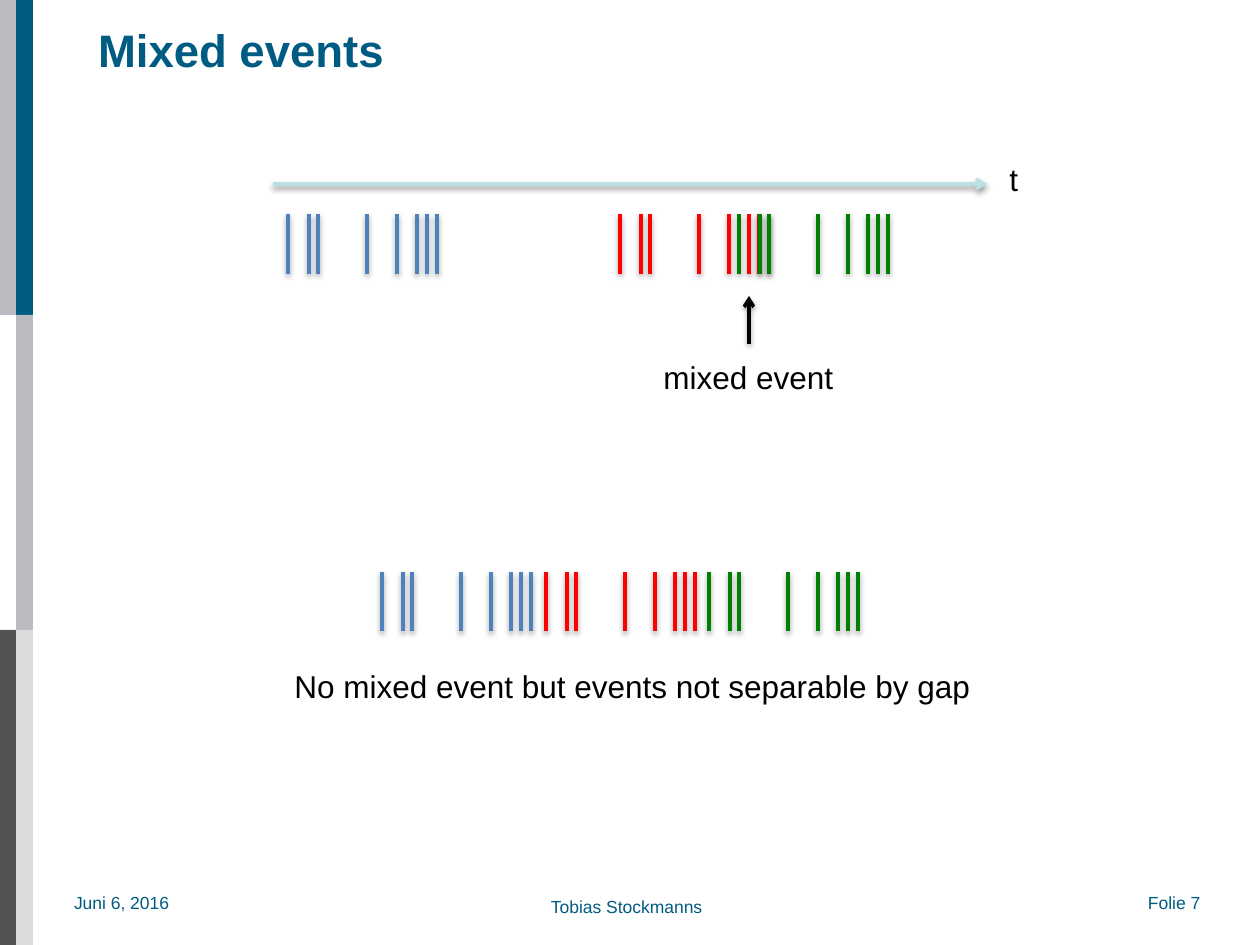
from lxml import etree
from pptx import Presentation
from pptx.dml.color import RGBColor
from pptx.enum.shapes import MSO_CONNECTOR, MSO_SHAPE
from pptx.enum.text import MSO_ANCHOR, MSO_AUTO_SIZE
from pptx.oxml import parse_xml
from pptx.oxml.ns import nsdecls, qn
from pptx.util import Emu, Pt

STRAIGHT = MSO_CONNECTOR.STRAIGHT
RECTANGLE = MSO_SHAPE.RECTANGLE
MIDDLE, TOP = MSO_ANCHOR.MIDDLE, MSO_ANCHOR.TOP
FIT_SHAPE, NO_FIT = MSO_AUTO_SIZE.SHAPE_TO_FIT_TEXT, MSO_AUTO_SIZE.NONE

PETROL = RGBColor(0x00, 0x5B, 0x82)
SILVER = RGBColor(0xB9, 0xBB, 0xC0)
SLATE = RGBColor(0x51, 0x53, 0x55)
PALE = RGBColor(0xDC, 0xDC, 0xDC)
BLUE = RGBColor(0x4F, 0x81, 0xBD)
RED = RGBColor(0xFF, 0x00, 0x00)
GREEN = RGBColor(0x00, 0x80, 0x00)
AQUA = RGBColor(0xBB, 0xE0, 0xE3)
BLACK = RGBColor(0x00, 0x00, 0x00)

FONT = "Arial"
EMU_PER_PX = 914400 / 126
BAND_HEIGHT = 315

BANDS = [(0, 0, 18, SILVER), (0, 2, 18, SLATE),
         (16, 0, 17, PETROL), (16, 1, 17, SILVER), (16, 2, 17, PALE)]

TITLE = ("Mixed events", 98, 10, 916, 78)
FOOTERS = [("Juni 6, 2016", 74, 892, 107, 21),
           ("Folie 7", 1148, 892, 78, 21),
           ("Tobias Stockmanns", 551, 896, 159, 21)]
LABELS = [("t", 997, 154, 34, 50),
          ("mixed event", 651, 352, 197, 50),
          ("No mixed event but events not separable by gap", 282, 661, 708, 50)]

HIT_OFFSETS = [0, 21, 30, 79, 109, 129, 139, 149]
EVENT_ROWS = [
    (572, 59, [(382, BLUE), (546, RED), (709, GREEN)]),
    (214, 60, [(288, BLUE), (620, RED), (739, GREEN)]),
]
ARROWS = [((273, 184), (987, 184), AQUA), ((749, 344), (749, 296), BLACK)]

SHADOW = (
    f'<a:effectLst {nsdecls("a")}>'
    '<a:outerShdw blurRad="40000" dist="20000" dir="5400000" rotWithShape="0">'
    '<a:srgbClr val="000000"><a:alpha val="38000"/></a:srgbClr>'
    '</a:outerShdw></a:effectLst>'
)


def px(length):
    return Emu(round(length * EMU_PER_PX))


def add_band(slide, left, row, width, color):
    band = slide.shapes.add_shape(
        RECTANGLE, px(left), px(row * BAND_HEIGHT), px(width), px(BAND_HEIGHT))
    band.shadow.inherit = False
    band.fill.solid()
    band.fill.fore_color.rgb = color
    band.line.fill.background()


def add_text(slide, item, size, color, inset=True, title=False):
    text, *box = item
    frame = slide.shapes.add_textbox(*map(px, box)).text_frame
    frame.word_wrap = title
    frame.auto_size = NO_FIT if title else FIT_SHAPE
    frame.vertical_anchor = MIDDLE if title else TOP
    if not inset:
        frame.margin_left = frame.margin_right = 0
        frame.margin_top = frame.margin_bottom = 0
    run = frame.paragraphs[0].add_run()
    run.text = text
    run.font.name = FONT
    run.font.size = Pt(size)
    run.font.bold = title
    run.font.color.rgb = color


def add_line(slide, start, end, color, arrow=False):
    connector = slide.shapes.add_connector(STRAIGHT, *map(px, start + end))
    connector.line.color.rgb = color
    connector.line.width = Pt(2)
    properties = connector._element.spPr
    if arrow:
        outline = properties.find(qn("a:ln"))
        etree.SubElement(outline, qn("a:tailEnd"), type="arrow")
    properties.append(parse_xml(SHADOW))


def main():
    deck = Presentation()
    deck.slide_width, deck.slide_height = px(1260), px(945)
    slide = deck.slides.add_slide(deck.slide_layouts[6])

    for band in BANDS:
        add_band(slide, *band)
    for footer in FOOTERS:
        add_text(slide, footer, 10, PETROL, inset=False)
    add_text(slide, TITLE, 26, PETROL, inset=False, title=True)

    for top, height, events in EVENT_ROWS:
        for left, color in events:
            for offset in HIT_OFFSETS:
                x = left + offset
                add_line(slide, (x, top), (x, top + height), color)
    for start, end, color in ARROWS:
        add_line(slide, start, end, color, arrow=True)
    for label in LABELS:
        add_text(slide, label, 18, BLACK)

    deck.save("out.pptx")


if __name__ == "__main__":
    main()
